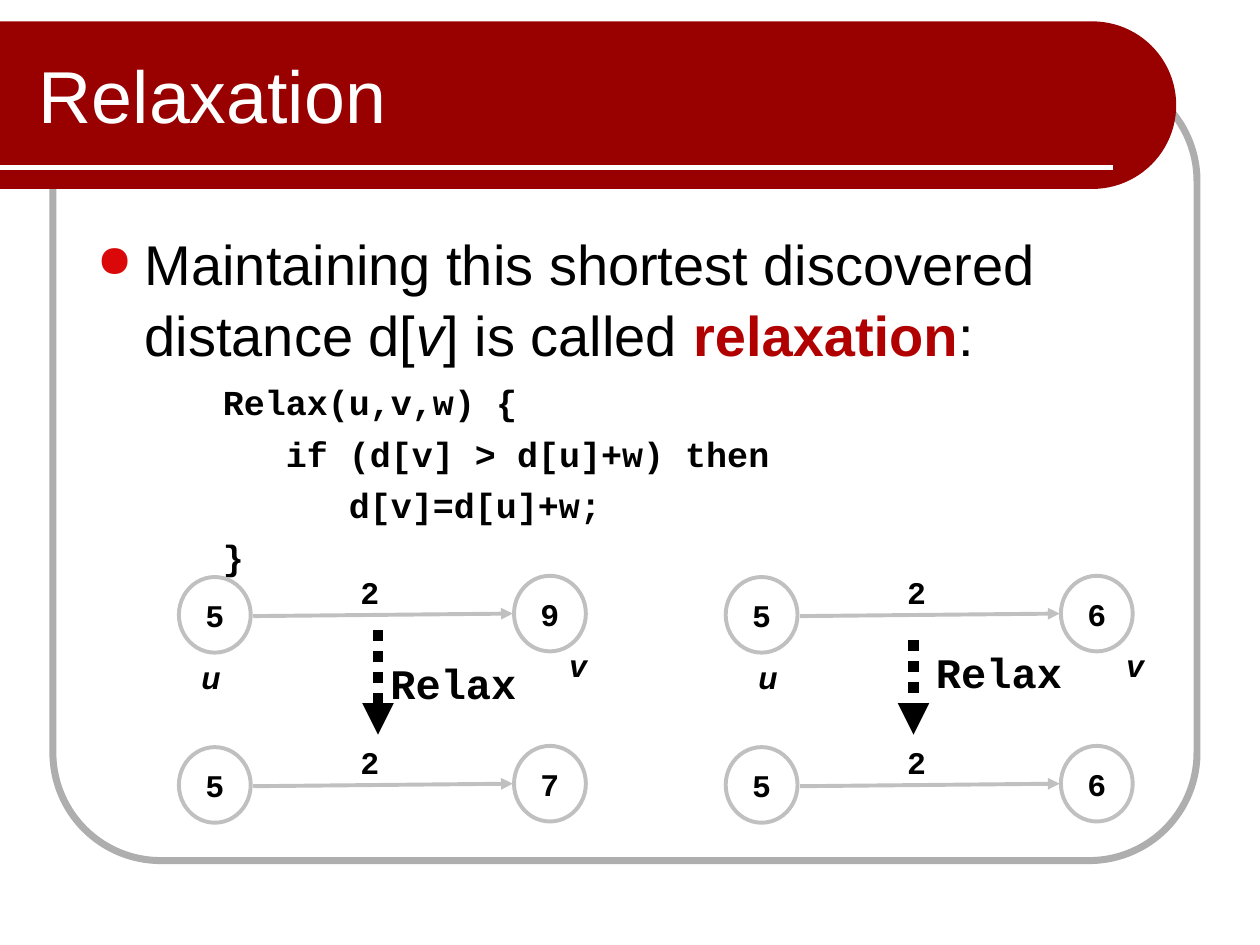
from dataclasses import dataclass
from math import cos, pi, sin

from lxml.etree import SubElement
from pptx import Presentation
from pptx.dml.color import RGBColor
from pptx.enum.dml import MSO_LINE
from pptx.enum.shapes import MSO_CONNECTOR, MSO_SHAPE
from pptx.enum.text import MSO_ANCHOR, PP_ALIGN
from pptx.oxml.ns import qn
from pptx.util import Inches, Pt


@dataclass(frozen=True)
class Theme:
    banner: str = "990000"
    frame: str = "AEAEAE"
    edge: str = "C0C0C0"
    bullet: str = "DA0808"
    accent: str = "B00000"
    black: str = "000000"
    white: str = "FFFFFF"
    sans: str = "Arial"
    mono: str = "Courier New"
    title_size: int = 42
    body_size: int = 32
    step_size: int = 24
    code_size: int = 20
    label_size: int = 18


THEME = Theme()
COLUMN_STEP, ROW_STEP = 4.34, 1.35
NODE_WIDTH, NODE_HEIGHT = 0.57, 0.6


def color(value):
    return RGBColor.from_string(value)


def style_run(run, size, font=THEME.sans, fill=THEME.black, bold=False, italic=False):
    run.font.size = Pt(size)
    run.font.name = font
    run.font.color.rgb = color(fill)
    run.font.bold = bold
    run.font.italic = italic


def add_text(slide, box, text, size, anchor=MSO_ANCHOR.TOP, align=PP_ALIGN.LEFT,
             wrap=False, **style):
    shape = slide.shapes.add_textbox(*map(Inches, box))
    text_frame = shape.text_frame
    text_frame.text = text
    text_frame.word_wrap = wrap
    text_frame.vertical_anchor = anchor
    paragraph = text_frame.paragraphs[0]
    paragraph.alignment = align
    style_run(paragraph.runs[0], size, **style)


def add_line(slide, start, end, stroke, width, dash=None, arrow=False):
    line = slide.shapes.add_connector(
        MSO_CONNECTOR.STRAIGHT, *map(Inches, (*start, *end)))
    line.line.color.rgb = color(stroke)
    line.line.width = Pt(width)
    if dash:
        line.line.dash_style = dash
    if arrow:
        SubElement(line.line._get_or_add_ln(), qn("a:tailEnd"), type="triangle")
    SubElement(line._element.spPr, qn("a:effectLst"))


def add_background(slide):
    # Rounded frame
    frame = slide.shapes.add_shape(
        MSO_SHAPE.ROUNDED_RECTANGLE, *map(Inches, (0.42, 0.58, 9.08, 6.25)))
    frame.adjustments[0] = 0.137
    frame.shadow.inherit = False
    frame.fill.background()
    frame.line.color.rgb = color(THEME.frame)
    frame.line.width = Pt(4)

    # Banner with a half-round right end
    center_x, center_y, radius, steps = 8.67, 0.835, 0.665, 48
    arc = [(Inches(center_x + radius * cos(angle)), Inches(center_y + radius * sin(angle)))
           for angle in (pi * (step / steps - 0.5) for step in range(steps + 1))]
    builder = slide.shapes.build_freeform(0, Inches(center_y - radius))
    builder.add_line_segments(arc + [(0, Inches(center_y + radius))], close=True)
    banner = builder.convert_to_shape()
    banner.shadow.inherit = False
    banner.fill.solid()
    banner.fill.fore_color.rgb = color(THEME.banner)
    banner.line.fill.background()
    add_line(slide, (0, 1.33), (8.83, 1.33), THEME.white, 3)


def set_indent(paragraph, margin, first_line):
    properties = paragraph._p.get_or_add_pPr()
    properties.set("marL", str(Inches(margin)))
    properties.set("indent", str(Inches(first_line)))
    return properties


def add_body(slide):
    shape = slide.shapes.add_textbox(*map(Inches, (0.67, 1.75, 8.67, 4.83)))
    text_frame = shape.text_frame
    text_frame.word_wrap = True

    # Bulleted statement
    statement = text_frame.paragraphs[0]
    statement.line_spacing = 1.05
    statement.space_before = Pt(3)
    for text, style in (
        ("Maintaining this shortest discovered distance d[", {}),
        ("v", {"italic": True}),
        ("] is called ", {}),
        ("relaxation", {"bold": True, "fill": THEME.accent}),
        (":", {}),
    ):
        run = statement.add_run()
        run.text = text
        style_run(run, THEME.body_size, **style)
    properties = set_indent(statement, 0.38, -0.38)
    bullet_color = SubElement(properties, qn("a:buClr"))
    SubElement(bullet_color, qn("a:srgbClr"), val=THEME.bullet)
    SubElement(properties, qn("a:buSzPct"), val="80000")
    SubElement(properties, qn("a:buChar"), char="●")

    # Pseudocode, nested by indent
    for depth, code in enumerate(
            ("Relax(u,v,w) {", "if (d[v] > d[u]+w) then", "d[v]=d[u]+w;", "}")):
        paragraph = text_frame.add_paragraph()
        paragraph.text = code
        paragraph.line_spacing = 1.05
        paragraph.space_before = Pt(4.4 if depth else 6)
        set_indent(paragraph, 1.25 + 0.5 * (depth % 3), -0.25)
        style_run(paragraph.runs[0], THEME.code_size, THEME.mono, bold=True)


def add_node(slide, left, top, value):
    node = slide.shapes.add_shape(
        MSO_SHAPE.OVAL, *map(Inches, (left, top, NODE_WIDTH, NODE_HEIGHT)))
    node.shadow.inherit = False
    node.fill.solid()
    node.fill.fore_color.rgb = color(THEME.white)
    node.line.color.rgb = color(THEME.edge)
    node.line.width = Pt(2.25)
    text_frame = node.text_frame
    text_frame.text = value
    text_frame.word_wrap = False
    text_frame.vertical_anchor = MSO_ANCHOR.MIDDLE
    paragraph = text_frame.paragraphs[0]
    paragraph.alignment = PP_ALIGN.CENTER
    style_run(paragraph.runs[0], THEME.label_size, THEME.mono, bold=True)


def add_edge_pair(slide, left, top, source, target):
    add_node(slide, left + 2.66, top - 0.01, target)
    add_node(slide, left, top, source)
    add_line(slide, (left + 0.59, top + 0.31), (left + 2.65, top + 0.29),
             THEME.edge, 2.25, arrow=True)
    add_text(slide, (left + 1.33, top - 0.08, 0.37, 0.43), "2", THEME.label_size,
             align=PP_ALIGN.CENTER, font=THEME.mono, bold=True)


def add_relax_step(slide, x, top, label_left, label_top):
    add_line(slide, (x, top), (x, 5.83), THEME.black, 6, MSO_LINE.ROUND_DOT, arrow=True)
    add_text(slide, (label_left, label_top, 1.2, 0.5), "Relax", THEME.step_size,
             font=THEME.mono, bold=True)


def main():
    presentation = Presentation()
    presentation.slide_width, presentation.slide_height = Inches(10), Inches(7.5)
    slide = presentation.slides.add_slide(presentation.slide_layouts[6])

    add_background(slide)
    add_text(slide, (0.21, 0.25, 7.79, 1), "Relaxation", THEME.title_size,
             anchor=MSO_ANCHOR.MIDDLE, wrap=True, fill=THEME.white)
    add_body(slide)

    # Two examples, each before and after relaxing
    for column, targets in enumerate(("97", "66")):
        for row, target in enumerate(targets):
            add_edge_pair(slide, 1.42 + column * COLUMN_STEP, 4.58 + row * ROW_STEP,
                          "5", target)
        for name, left, top in (("u", 1.5, 5.17), ("v", 4.42, 5.08)):
            add_text(slide, (left + column * 4.42, top, 0.35, 0.4), name,
                     THEME.label_size, bold=True, italic=True)
    add_relax_step(slide, 3, 5, 3, 5.17)
    add_relax_step(slide, 7.25, 5.08, 7.33, 5.08)

    presentation.save("out.pptx")


if __name__ == "__main__":
    main()
